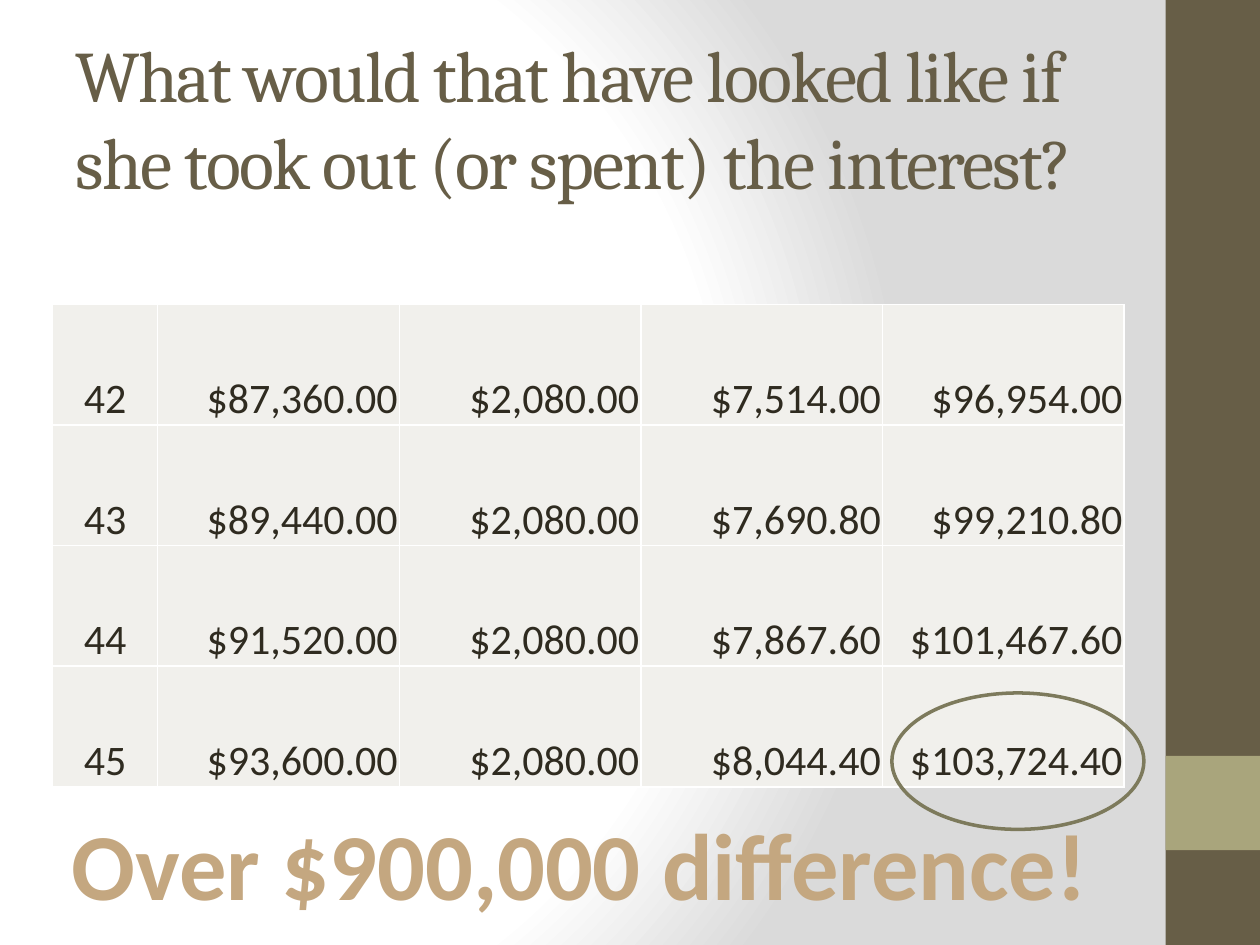
from lxml import etree
from pptx import Presentation
from pptx.dml.color import RGBColor
from pptx.enum.shapes import MSO_SHAPE as Shape
from pptx.enum.text import MSO_ANCHOR as Anchor, PP_ALIGN as Align
from pptx.oxml import parse_xml
from pptx.oxml.ns import nsdecls, qn
from pptx.util import Cm, Pt

COLORS = {
    "title": "675E47",
    "accent": "A9A57C",
    "cell": "F1F0EC",
    "figures": "2F2B20",
    "verdict": "C4A780",
    "ring": "7D7A5C",
    "light": "FFFFFF",
    "shade": "DADADA",
}
SAVINGS = [
    ("42", "$87,360.00", "$2,080.00", "$7,514.00", "$96,954.00"),
    ("43", "$89,440.00", "$2,080.00", "$7,690.80", "$99,210.80"),
    ("44", "$91,520.00", "$2,080.00", "$7,867.60", "$101,467.60"),
    ("45", "$93,600.00", "$2,080.00", "$8,044.40", "$103,724.40"),
]
AGE_WIDTH, AMOUNT_WIDTH, ROW_HEIGHT = 2.12, 4.87, 2.43


def rgb(name):
    return RGBColor.from_string(COLORS[name])


def write(frame, text, *, size, color, font="Calibri", bold=False,
          align=Align.LEFT, spacing=None):
    paragraph = frame.paragraphs[0]
    paragraph.alignment = align
    run = paragraph.add_run()
    run.text = text
    run.font.size = Pt(size)
    run.font.name = font
    run.font.bold = bold
    run.font.color.rgb = rgb(color)
    if spacing is not None:
        run.font._element.set("spc", str(round(spacing * 100)))


def add_text(slide, text, box, *, wrap=True, anchor=Anchor.TOP, **style):
    frame = slide.shapes.add_textbox(*map(Cm, box)).text_frame
    frame.word_wrap = wrap
    frame.vertical_anchor = anchor
    write(frame, text, **style)


def add_figure(slide, kind, box, *, fill=None, line=None):
    figure = slide.shapes.add_shape(kind, *map(Cm, box))
    figure.shadow.inherit = False
    if fill:
        figure.fill.solid()
        figure.fill.fore_color.rgb = rgb(fill)
    else:
        figure.fill.background()
    if line:
        figure.line.color.rgb = rgb(line)
        figure.line.width = Pt(2)
    else:
        figure.line.fill.background()


def set_background(slide):
    slide.background.fill.gradient()
    gradient = next(slide._element.iter(qn("a:gradFill")))
    stops = "".join(
        f'<a:gs pos="{percent * 1000}"><a:srgbClr val="{COLORS[name]}"/></a:gs>'
        for percent, name in ((0, "light"), (75, "light"), (100, "shade")))
    gradient.getparent().replace(gradient, parse_xml(
        f'<a:gradFill {nsdecls("a")} rotWithShape="1"><a:gsLst>{stops}</a:gsLst>'
        '<a:path path="circle"><a:fillToRect l="20000" t="50000" r="100000" b="50000"/>'
        '</a:path></a:gradFill>'))


def add_borders(cell):
    properties = cell._tc.get_or_add_tcPr()
    for side in ("lnL", "lnR", "lnT", "lnB"):
        border = etree.SubElement(properties, qn(f"a:{side}"), w=str(Pt(1)))
        fill = etree.SubElement(border, qn("a:solidFill"))
        etree.SubElement(fill, qn("a:srgbClr"), val=COLORS["light"])


def add_savings_table(slide, left, top):
    widths = [AGE_WIDTH] + [AMOUNT_WIDTH] * 4
    table = slide.shapes.add_table(
        len(SAVINGS), len(widths), Cm(left), Cm(top),
        Cm(sum(widths)), Cm(ROW_HEIGHT * len(SAVINGS))).table
    table.first_row = table.horz_banding = False
    for column, width in zip(table.columns, widths):
        column.width = Cm(width)
    for row, values in enumerate(SAVINGS):
        table.rows[row].height = Cm(ROW_HEIGHT)
        for column, value in enumerate(values):
            cell = table.cell(row, column)
            add_borders(cell)
            cell.fill.solid()
            cell.fill.fore_color.rgb = rgb("cell")
            cell.vertical_anchor = Anchor.BOTTOM
            cell.margin_left = cell.margin_right = cell.margin_top = Cm(0.03)
            cell.margin_bottom = 0
            write(cell.text_frame, value, size=24, color="figures",
                  align=Align.RIGHT if column else Align.CENTER)


def main():
    deck = Presentation()
    deck.slide_width, deck.slide_height = Cm(25.4), Cm(19.05)
    slide = deck.slides.add_slide(deck.slide_layouts[6])

    # Background and side band
    set_background(slide)
    add_figure(slide, Shape.RECTANGLE, (23.5, 0, 1.9, 19.05), fill="title")
    add_figure(slide, Shape.RECTANGLE, (23.5, 15.24, 1.9, 1.9), fill="accent")

    # Title
    add_text(slide, "What would that have looked like if she took out (or spent) the interest?",
             (1.27, 0.76, 21.16, 3.18), anchor=Anchor.MIDDLE,
             size=41.4, color="title", font="Cambria", spacing=-1)

    # Savings by age
    add_savings_table(slide, 1.06, 6.14)

    # Conclusion and ring around the final balance
    add_text(slide, "Over $900,000 difference!", (1.06, 16.13, 21.26, 2.57), wrap=False,
             size=54, color="verdict", bold=True, align=Align.CENTER)
    add_figure(slide, Shape.OVAL, (17.98, 13.97, 5.08, 2.75), line="ring")

    deck.save("out.pptx")


main()
